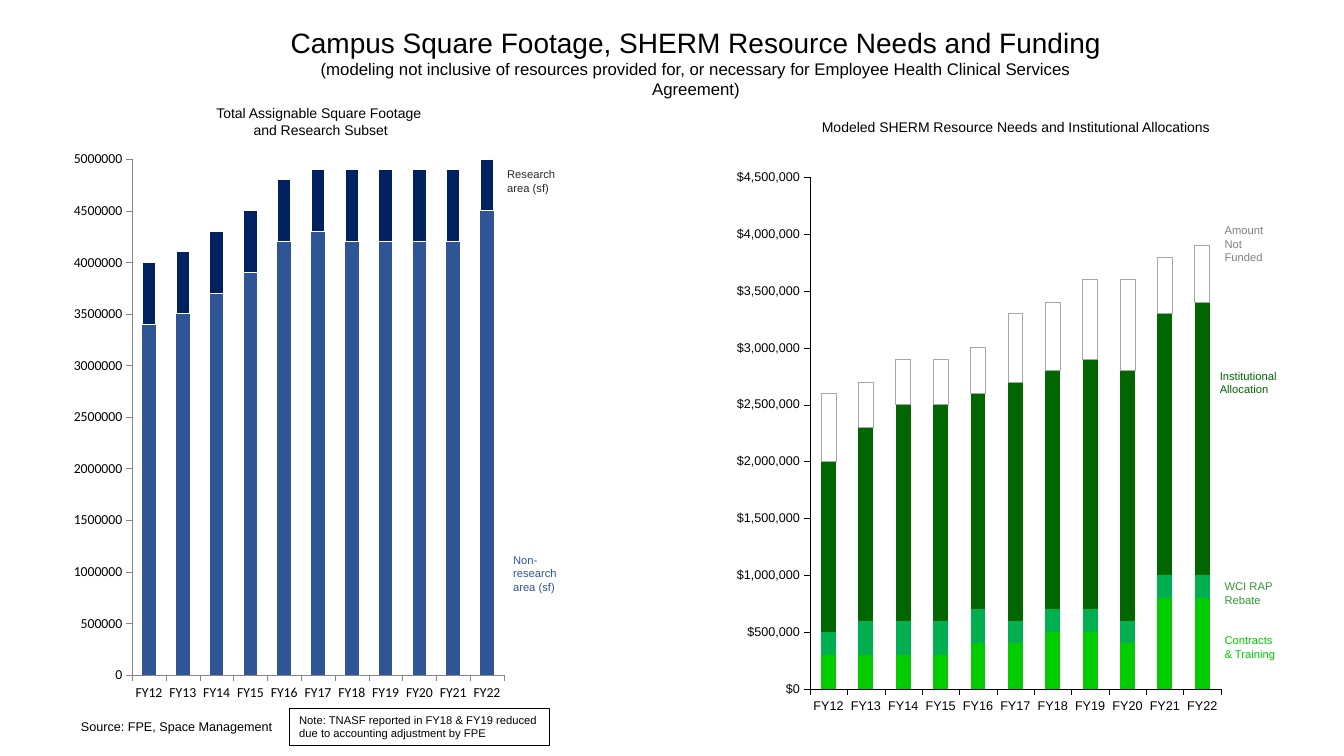
"""Build the slide on campus square footage, resource needs and funding."""
from lxml.etree import SubElement
from pptx import Presentation
from pptx.chart.data import CategoryChartData
from pptx.dml.color import RGBColor
from pptx.enum.chart import XL_CHART_TYPE, XL_TICK_MARK
from pptx.enum.shapes import MSO_SHAPE
from pptx.enum.text import MSO_ANCHOR, MSO_AUTO_SIZE, PP_ALIGN
from pptx.oxml.ns import qn
from pptx.util import Cm, Pt

YEARS = [f"FY{year}" for year in range(12, 23)]
UNIT = 100000

HEAD = ["Campus Square Footage, SHERM Resource Needs and Funding",
        "(modeling not inclusive of resources provided for, or necessary for "
        "Employee Health Clinical Services Agreement)"]
HEAD_BOX = (6.84, 0.51, 21.4, 2.1)

SPACE = [
    ("Non-research area (sf)", "2F5597", None,
     [34, 35, 37, 39, 42, 43, 42, 42, 42, 42, 45]),
    ("Research area (sf)", "002060", ("FFFFFF", 0.75),
     [6, 6, 6, 6, 6, 6, 7, 7, 7, 7, 7]),
]
FUNDS = [
    ("Contracts & Training", "00CC00", None,
     [3, 3, 3, 3, 4, 4, 5, 5, 4, 8, 8]),
    ("WCI RAP Rebate", "00B050", None,
     [2, 3, 3, 3, 3, 2, 2, 2, 2, 2, 2]),
    ("Institutional Allocation", "006600", None,
     [15, 17, 19, 19, 19, 21, 21, 22, 22, 23, 24]),
    ("Amount Not Funded", None, ("A6A6A6", 0.54),
     [6, 4, 4, 4, 4, 6, 6, 7, 8, 5, 5]),
]
CHARTS = [
    dict(rows=FUNDS, box=(17.58, 3.76, 13.49, 14.88),
         plot=(20.41, 4.47, 10.36, 12.89), top=4500000, form="\\$#,##0",
         font="Arial", size=9, line="000000"),
    dict(rows=SPACE, box=(1.65, 3.53, 11.28, 14.4),
         plot=(3.33, 4.01, 9.37, 13), top=5000000, form="General",
         font="Calibri", size=9.8, line="868686"),
]

TITLES = [
    (["Modeled SHERM Resource Needs and Institutional Allocations"],
     (20.4, 2.87, 10.39, 1.12)),
    (["Total Assignable Square Footage ", "and Research Subset"],
     (3.7, 2.51, 8.76, 1.12)),
]
LABELS = [
    ("Institutional Allocation", "006600", (30.49, 9.17, 2.13, 0.94)),
    ("Amount Not Funded", "808080", (30.61, 5.51, 1.7, 1.3)),
    ("Contracts & Training", "00CC00", (30.61, 15.84, 1.83, 0.94)),
    ("WCI RAP Rebate", "339933", (30.61, 14.48, 2.13, 0.94)),
    ("Research area (sf)", "292929", (12.53, 4.1, 1.85, 0.94)),
    ("Non-research area (sf)", "2F5597", (12.68, 13.82, 1.7, 1.3)),
]
SOURCE = ("Source: FPE, Space Management", (1.79, 17.99, 5.38, 0.64))
NOTE = ("Note: TNASF reported in FY18 & FY19 reduced due to accounting "
        "adjustment by FPE", (7.29, 17.84, 6.55, 0.94))


def tint(code):
    return RGBColor.from_string(code)


def place(box):
    return [Cm(side) for side in box]


def write(shape, lines, sizes=(8,), color="000000", align=PP_ALIGN.LEFT):
    frame = shape.text_frame
    frame.text = "\n".join(lines)
    frame.word_wrap = True
    frame.auto_size = MSO_AUTO_SIZE.NONE
    frame.vertical_anchor = MSO_ANCHOR.TOP
    for spot, para in enumerate(frame.paragraphs):
        para.alignment = align
        font = para.runs[0].font
        font.name = "Arial"
        font.size = Pt(sizes[min(spot, len(sizes) - 1)])
        font.color.rgb = tint(color)


def label(slide, lines, box, **form):
    write(slide.shapes.add_textbox(*place(box)), lines, **form)


def set_plot(chart, box, plot):
    area = chart._chartSpace.find(".//" + qn("c:plotArea"))
    for old in area.findall(qn("c:layout")):
        area.remove(old)
    outer = SubElement(area, qn("c:layout"))
    area.insert(0, outer)
    inner = SubElement(outer, qn("c:manualLayout"))
    parts = [("layoutTarget", "inner"), ("xMode", "edge"), ("yMode", "edge"),
             ("x", (plot[0] - box[0]) / box[2]),
             ("y", (plot[1] - box[1]) / box[3]),
             ("w", plot[2] / box[2]), ("h", plot[3] / box[3])]
    for tag, value in parts:
        SubElement(inner, qn("c:" + tag)).set("val", str(value))


def add_bars(slide, rows, box, plot, top, form, font, size, line):
    data = CategoryChartData(number_format=form)
    data.categories = YEARS
    for name, _, _, values in rows:
        data.add_series(name, [value * UNIT for value in values])
    chart = slide.shapes.add_chart(
        XL_CHART_TYPE.COLUMN_STACKED, *place(box), data).chart
    chart.has_legend = False
    chart.has_title = False
    chart.font.name = font
    chart.font.size = Pt(size)
    chart.font.color.rgb = tint("000000")
    bars = chart.plots[0]
    bars.gap_width = 150
    bars.overlap = 100
    bars.vary_by_categories = False
    for bar, (_, fill, edge, _) in zip(bars.series, rows):
        if fill:
            bar.format.fill.solid()
            bar.format.fill.fore_color.rgb = tint(fill)
        else:
            bar.format.fill.background()
        if edge:
            bar.format.line.color.rgb = tint(edge[0])
            bar.format.line.width = Pt(edge[1])
        else:
            bar.format.line.fill.background()
    for axis in (chart.category_axis, chart.value_axis):
        axis.has_major_gridlines = False
        axis.major_tick_mark = XL_TICK_MARK.OUTSIDE
        axis.minor_tick_mark = XL_TICK_MARK.NONE
        axis.format.line.color.rgb = tint(line)
        axis.format.line.width = Pt(0.13)
    scale = chart.value_axis
    scale.minimum_scale = 0
    scale.maximum_scale = top
    scale.major_unit = 500000
    scale.tick_labels.number_format = form
    scale.tick_labels.number_format_is_linked = False
    set_plot(chart, box, plot)


def main():
    deck = Presentation()
    deck.slide_width, deck.slide_height = Cm(33.87), Cm(19.05)
    slide = deck.slides.add_slide(deck.slide_layouts[5])
    title = slide.shapes.title
    title.left, title.top, title.width, title.height = place(HEAD_BOX)
    write(title, HEAD, sizes=(20, 12), align=PP_ALIGN.CENTER)
    for chart in CHARTS:
        add_bars(slide, **chart)
    for lines, box in TITLES:
        label(slide, lines, box, sizes=(10,), align=PP_ALIGN.CENTER)
    for text, color, box in LABELS:
        label(slide, [text], box, color=color)
    label(slide, [SOURCE[0]], SOURCE[1], sizes=(9,))
    note = slide.shapes.add_shape(MSO_SHAPE.RECTANGLE, *place(NOTE[1]))
    note.shadow.inherit = False
    note.fill.background()
    note.line.color.rgb = tint("000000")
    note.line.width = Pt(0.25)
    write(note, [NOTE[0]])
    deck.save("out.pptx")


if __name__ == "__main__":
    main()
